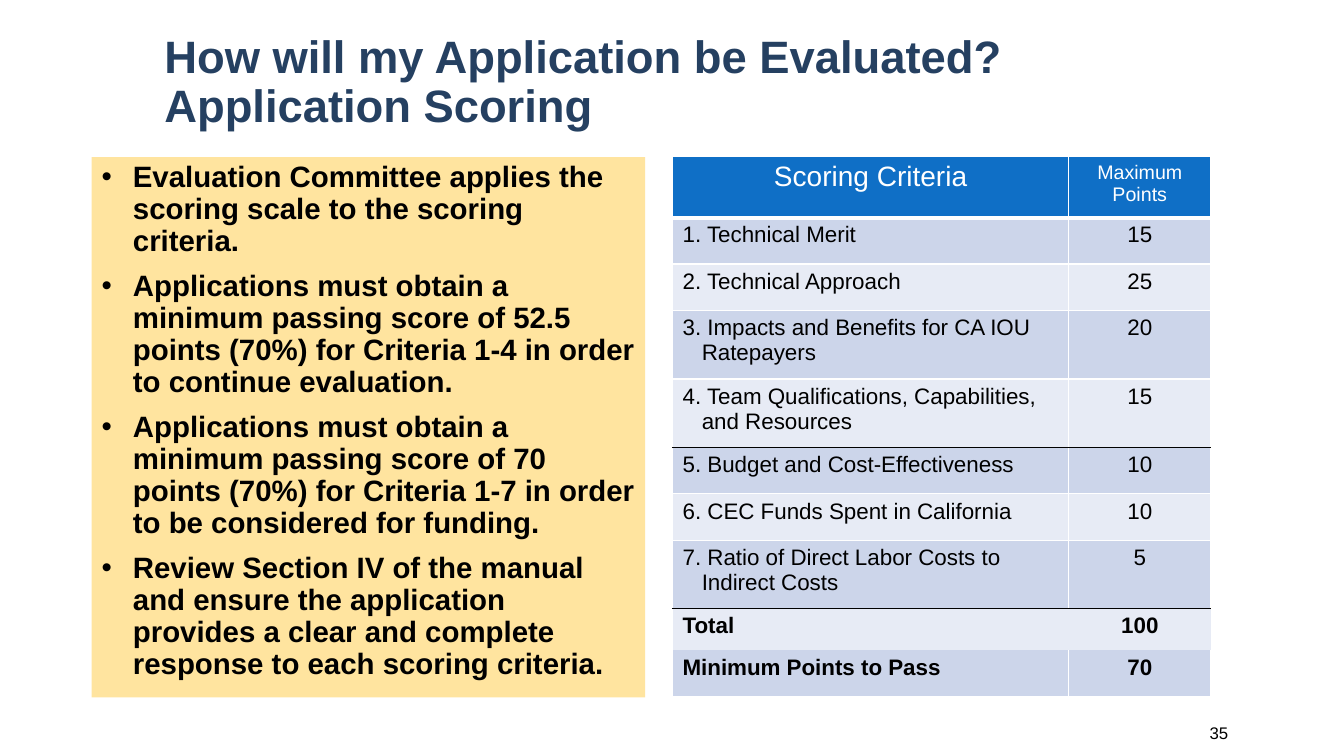
from dataclasses import dataclass
from typing import Optional

from lxml.etree import SubElement
from pptx import Presentation
from pptx.dml.color import RGBColor
from pptx.enum.text import MSO_ANCHOR, MSO_AUTO_SIZE, PP_ALIGN
from pptx.oxml.ns import qn
from pptx.util import Inches, Pt

WHITE, BLACK, NAVY = "FFFFFF", "000000", "254061"
CREAM, BLUE = "FFE49F", "0F6FC6"
BANDS = ("E7EBF5", "CCD5EA")
HANGING = 0.19


@dataclass
class Line:
    color: Optional[str] = WHITE
    width: float = 1


@dataclass
class Row:
    label: str
    points: str
    height: float = 0.46
    hanging: bool = False
    bold: bool = False
    ruled_below: bool = False


BULLETS = [
    "Evaluation Committee applies the scoring scale to the scoring criteria.",
    "Applications must obtain a minimum passing score of 52.5 points (70%) "
    "for Criteria 1-4 in order to continue evaluation.",
    "Applications must obtain a minimum passing score of 70 points (70%) "
    "for Criteria 1-7 in order to be considered for funding.",
    "Review Section IV of the manual and ensure the application provides "
    "a clear and complete response to each scoring criteria.",
]

ROWS = [
    Row("Scoring Criteria", "Maximum Points", 0.61),
    Row("1. Technical Merit", "15"),
    Row("2. Technical Approach", "25"),
    Row("3. Impacts and Benefits for CA IOU Ratepayers", "20", 0.68, hanging=True),
    Row("4. Team Qualifications, Capabilities, and Resources", "15", 0.68,
        hanging=True, ruled_below=True),
    Row("5. Budget and Cost-Effectiveness", "10"),
    Row("6. CEC Funds Spent in California", "10"),
    Row("7. Ratio of Direct Labor Costs to Indirect Costs", "5", 0.68,
        hanging=True, ruled_below=True),
    Row("Total", "100", 0.41, bold=True),
    Row("Minimum Points to Pass", "70", bold=True),
]
COLUMNS = (3.93, 1.41)
TOTAL = len(ROWS) - 2


def rgb(color: str) -> RGBColor:
    return RGBColor.from_string(color)


def format_runs(p, size: float, color: str, bold: bool = False) -> None:
    for r in p.runs:
        r.font.name = "Arial"
        r.font.size = Pt(size)
        r.font.bold = bold
        r.font.color.rgb = rgb(color)


def set_indent(p, indent: float) -> None:
    pPr = p._p.get_or_add_pPr()
    pPr.set("marL", str(Inches(indent)))
    pPr.set("indent", str(-Inches(indent)))


def place(sp, left: float, top: float, width: float, height: float) -> None:
    sp.left, sp.top = Inches(left), Inches(top)
    sp.width, sp.height = Inches(width), Inches(height)


def add_title(s) -> None:
    sp = s.shapes.title
    place(sp, 1.53, 0.26, 10.89, 1.14)
    tf = sp.text_frame
    tf.text = "How will my Application be Evaluated?\vApplication Scoring"
    tf.auto_size = MSO_AUTO_SIZE.NONE
    tf.vertical_anchor = MSO_ANCHOR.MIDDLE
    p = tf.paragraphs[0]
    p.alignment = PP_ALIGN.LEFT
    p.line_spacing = 0.9
    format_runs(p, 32.4, NAVY, True)


def add_bullets(s) -> None:
    sp = s.shapes.add_textbox(Inches(0.91), Inches(1.56), Inches(5.49), Inches(5.36))
    sp.fill.solid()
    sp.fill.fore_color.rgb = rgb(CREAM)
    tf = sp.text_frame
    tf.word_wrap = True
    tf.text = "\n".join(BULLETS)
    for i, p in enumerate(tf.paragraphs):
        p.line_spacing = 0.9
        p.space_before = Pt(10 if i else 0)
        set_indent(p, 0.31)
        pPr = p._p.get_or_add_pPr()
        SubElement(pPr, qn("a:buFont"), typeface="Arial")
        SubElement(pPr, qn("a:buChar"), char="•")
        format_runs(p, 21, BLACK, True)


def set_borders(cell, borders: dict[str, Line]) -> None:
    tcPr = cell._tc.get_or_add_tcPr()
    for side, line in borders.items():
        ln = SubElement(tcPr, qn(f"a:ln{side}"), w=str(Pt(line.width)))
        if line.color is None:
            SubElement(ln, qn("a:noFill"))
        else:
            fill = SubElement(ln, qn("a:solidFill"))
            SubElement(fill, qn("a:srgbClr"), val=line.color)


def row_borders(i: int) -> dict[str, Line]:
    side = Line(None) if i == TOTAL else Line()
    top, bottom = Line(), Line()
    if i == 0:
        bottom = Line(WHITE, 3)
    elif i == 1:
        top = Line(WHITE, 3)
    if i and ROWS[i - 1].ruled_below:
        top = Line(BLACK)
    if ROWS[i].ruled_below:
        bottom = Line(BLACK)
    if i == TOTAL:
        bottom = Line(None)
    elif i == TOTAL + 1:
        top = Line(None)
    return {"L": side, "R": side, "T": top, "B": bottom}


def add_scores(s) -> None:
    frame = s.shapes.add_table(
        len(ROWS), len(COLUMNS), Inches(6.67), Inches(1.55),
        Inches(sum(COLUMNS)), Inches(sum(row.height for row in ROWS)))
    table = frame.table
    for column, width in zip(table.columns, COLUMNS):
        column.width = Inches(width)
    for i, row in enumerate(ROWS):
        table.rows[i].height = Inches(row.height)
        for j, text in enumerate((row.label, row.points)):
            cell = table.cell(i, j)
            cell.text_frame.text = text
            set_borders(cell, row_borders(i))
            cell.fill.solid()
            cell.fill.fore_color.rgb = rgb(BANDS[i % 2] if i else BLUE)
            p = cell.text_frame.paragraphs[0]
            p.alignment = PP_ALIGN.CENTER if j or not i else PP_ALIGN.LEFT
            if row.hanging and j == 0:
                set_indent(p, HANGING)
            size = 16 if i else (20, 14)[j]
            format_runs(p, size, BLACK if i else WHITE, row.bold)


def add_page_number(s) -> None:
    sp = s.shapes.add_textbox(Inches(10.35), Inches(7.07), Inches(1.93), Inches(0.4))
    tf = sp.text_frame
    tf.word_wrap = True
    tf.vertical_anchor = MSO_ANCHOR.MIDDLE
    tf.text = "35"
    p = tf.paragraphs[0]
    p.alignment = PP_ALIGN.RIGHT
    format_runs(p, 12, BLACK)


def main() -> None:
    prs = Presentation()
    prs.slide_width, prs.slide_height = Inches(13.33), Inches(7.5)
    s = prs.slides.add_slide(prs.slide_layouts[5])
    add_title(s)
    add_bullets(s)
    add_scores(s)
    add_page_number(s)
    prs.save("out.pptx")


if __name__ == "__main__":
    main()
